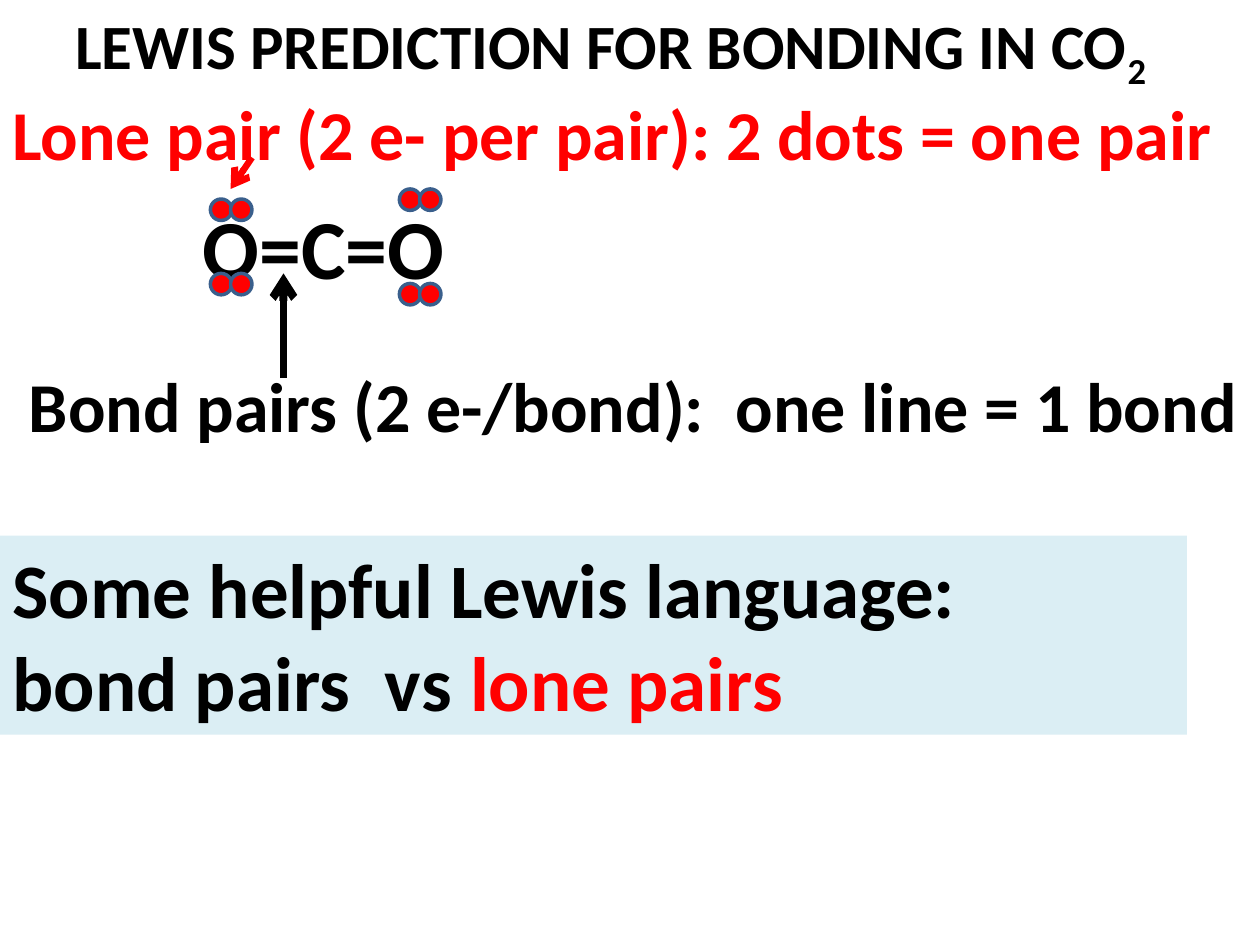
"""Build the slide on the Lewis prediction for bonding in CO2."""
from lxml.etree import SubElement
from pptx import Presentation
from pptx.dml.color import RGBColor
from pptx.enum.shapes import MSO_CONNECTOR as Connector, MSO_SHAPE as Preset
from pptx.enum.text import MSO_ANCHOR as Anchor, PP_ALIGN as Align
from pptx.oxml.ns import qn
from pptx.util import Inches, Pt

COLORS = {"ink": "000000", "lone": "FF0000", "dot_edge": "3A5F8C", "panel": "DBEEF4"}
FONT = {"name": "Calibri", "bold": True}
DOT = 0.17
DOT_STEP = 0.16

FORMULA = ((1.25, 1.5, 2.75, 0.91), 0.36, 48, [[("O=C=O", "ink", 0)]])
LABELS = [
    ((0.5, 0, 9.25, 0.71), 0.1, 36,
     [[("LEWIS PREDICTION FOR BONDING IN CO", "ink", 0), ("2", "ink", -25)]]),
    ((0, 2.83, 10, 0.77), 0.23, 40,
     [[("Bond pairs (2 e-/bond):  one line = 1 bond", "ink", 0)]]),
    ((0, 0.67, 10, 0.77), 0.1, 40,
     [[("Lone pair (2 e- per pair): 2 dots = one pair", "lone", 0)]]),
]
LANGUAGE = ((0, 4.25, 9.42, 1.58), 0.1, 44, [
    [("Some helpful Lewis language:", "ink", 0)],
    [("bond pairs  vs ", "ink", 0), ("lone pairs", "lone", 0)],
])
LONE_PAIRS = [(1.67, 1.58), (3.17, 1.5), (3.17, 2.25), (1.67, 2.17)]
ARROWS = [
    ((2.25, 3), (2.25, 2.17), "ink", 4.5),
    ((2, 1.25), (1.83, 1.5), "lone", 3.75),
]


def color(key):
    return RGBColor.from_string(COLORS[key])


def write(frame, inset, size, paragraphs):
    layout = {"word_wrap": True, "vertical_anchor": Anchor.TOP,
              "margin_left": Inches(inset)}
    for name, value in layout.items():
        setattr(frame, name, value)
    for index, pieces in enumerate(paragraphs):
        line = frame.paragraphs[0] if index == 0 else frame.add_paragraph()
        line.alignment = Align.LEFT
        for words, tone, baseline in pieces:
            run = line.add_run()
            run.text = words
            for name, value in {**FONT, "size": Pt(size)}.items():
                setattr(run.font, name, value)
            run.font.color.rgb = color(tone)
            if baseline:
                run._r.get_or_add_rPr().set("baseline", str(baseline * 1000))


def add_label(slide, box, inset, size, paragraphs):
    label = slide.shapes.add_textbox(*map(Inches, box))
    write(label.text_frame, inset, size, paragraphs)


def add_filled(slide, preset, box, fill):
    shape = slide.shapes.add_shape(preset, *map(Inches, box))
    shape.shadow.inherit = False
    shape.fill.solid()
    shape.fill.fore_color.rgb = color(fill)
    return shape


def add_lone_pair(slide, left, top):
    for step in range(2):
        box = (left + step * DOT_STEP, top, DOT, DOT)
        electron = add_filled(slide, Preset.OVAL, box, "lone")
        electron.line.color.rgb = color("dot_edge")
        electron.line.width = Pt(2)


def add_arrow(slide, start, end, tone, width):
    arrow = slide.shapes.add_connector(Connector.STRAIGHT, *map(Inches, start + end))
    arrow.line.color.rgb = color(tone)
    arrow.line.width = Pt(width)
    SubElement(arrow.line._get_or_add_ln(), qn("a:tailEnd"), type="arrow")
    SubElement(arrow._element.spPr, qn("a:effectLst"))


def main():
    deck = Presentation()
    deck.slide_width, deck.slide_height = Inches(10), Inches(7.5)
    slide = deck.slides.add_slide(deck.slide_layouts[6])
    add_label(slide, *FORMULA)
    for left, top in LONE_PAIRS:
        add_lone_pair(slide, left, top)
    panel_box, *panel_text = LANGUAGE
    panel = add_filled(slide, Preset.RECTANGLE, panel_box, "panel")
    panel.line.fill.background()
    write(panel.text_frame, *panel_text)
    for label in LABELS:
        add_label(slide, *label)
    for arrow in ARROWS:
        add_arrow(slide, *arrow)
    deck.save("out.pptx")


if __name__ == "__main__":
    main()
